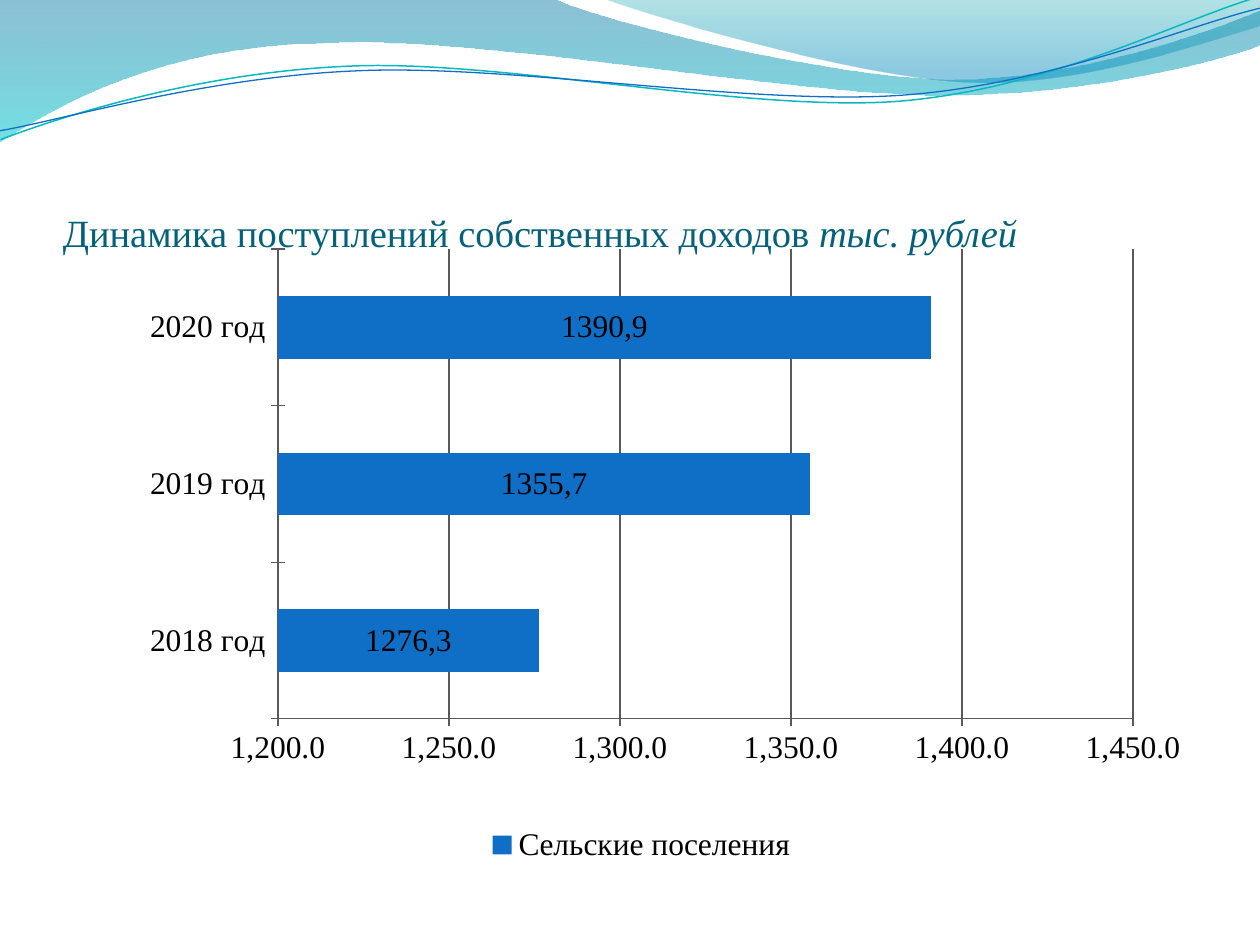
from lxml.etree import SubElement
from pptx import Presentation
from pptx.chart.data import CategoryChartData
from pptx.dml.color import RGBColor
from pptx.enum.chart import XL_CHART_TYPE, XL_LEGEND_POSITION, XL_TICK_MARK
from pptx.enum.text import MSO_ANCHOR
from pptx.oxml.ns import qn
from pptx.util import Pt

PX = 914400 / 126
FONT = "Times New Roman"
COLORS = {"title": "04617B", "bar": "0F6FC6", "teal": "0AB8BF", "text": "000000", "axis": "595959",
          "wave_top": "0074A1", "wave_end": "00C6CF", "crest_top": "00A1A9", "crest_end": "008BBF"}


def px(n):
    """Turn pixels into EMU."""
    return round(n * PX)


def rgb(name):
    """Look up a palette colour."""
    return RGBColor.from_string(COLORS[name])


def add_outline(s, box, start, segments, close):
    """Draw an outline of lines (2 numbers) and cubic curves (6 numbers) relative to the box."""
    flat = [start] + [seg[i:i + 2] for seg in segments for i in range(0, len(seg), 2)]
    points = [(px(box[0] + x), px(box[1] + y)) for x, y in flat]
    builder = s.shapes.build_freeform(*points[0])
    builder.add_line_segments(points[1:], close=close)
    sp = builder.convert_to_shape()
    steps = iter(list(sp._element.iter(qn("a:lnTo"))))
    for seg in segments:
        first = next(steps)
        if len(seg) == 6:
            curve = first.makeelement(qn("a:cubicBezTo"))
            first.addprevious(curve)
            for step in (first, next(steps), next(steps)):
                curve.append(step[0])
                step.getparent().remove(step)
    sp.shadow.inherit = False
    sp.fill.background()
    return sp


def fill_gradient(sp, stops):
    """Fill a shape from top to bottom with (position, colour, opacity) stops in percent."""
    sp.line.fill.background()
    sp.fill.gradient()
    grad = sp._element.spPr.find(qn("a:gradFill"))
    for child in list(grad):
        grad.remove(child)
    gs_lst = SubElement(grad, qn("a:gsLst"))
    for pos, color, alpha in stops:
        gs = SubElement(gs_lst, qn("a:gs"), pos=str(pos * 1000))
        clr = SubElement(gs, qn("a:srgbClr"), val=COLORS[color])
        SubElement(clr, qn("a:alpha"), val=str(alpha * 1000))
    SubElement(grad, qn("a:lin"), ang="5400000", scaled="0")


def add_header(s, box):
    """Draw the two waves and the two tilted thin lines at the top of the box."""
    wave = add_outline(s, box, (0, 0), [
        (554, -1), (600, 21, 837, 79, 955, 79), (1075, 79, 1207, 33, 1260, 11), (1261, 45),
        (1239, 55, 1096, 96, 940, 95), (784, 95, 481, 35, 324, 43), (163, 45, 58, 105, -1, 142)], True)
    fill_gradient(wave, [(0, "wave_top", 45), (100, "wave_end", 55)])
    crest = add_outline(s, box, (604, -1), [
        (641, 14, 859, 78, 969, 82), (1079, 87, 1211, 40, 1260, 26), (1260, 0)], True)
    fill_gradient(crest, [(0, "crest_top", 30), (80, "crest_end", 45)])
    lines = [
        ("teal", 0.85, (-2, 110), [(59, 90, 199, 52, 350, 53), (499, 53, 745, 118, 896, 114),
                                   (1049, 109, 1184, 45, 1260, 27)]),
        ("bar", 0.75, (-2, 101), [(57, 94, 207, 57, 357, 58), (509, 58, 750, 112, 902, 108),
                                  (1052, 104, 1188, 52, 1262, 38)])]
    for color, width, start, segments in lines:
        sp = add_outline(s, box, start, segments, False)
        sp.rotation = 357.3
        sp.line.color.rgb = rgb(color)
        sp.line.width = Pt(width)


def add_title(s, box):
    """Write the title at the bottom of the box."""
    tf = s.shapes.add_textbox(*map(px, box)).text_frame
    tf.word_wrap = True
    tf.vertical_anchor = MSO_ANCHOR.BOTTOM
    tf.margin_left = tf.margin_right = tf.margin_bottom = 0
    p = tf.paragraphs[0]
    p.font.size, p.font.name, p.font.color.rgb = Pt(22), FONT, rgb("title")
    p.add_run().text = "Динамика поступлений собственных доходов "
    r = p.add_run()
    r.text = "тыс. рублей"
    r.font.italic = True


def set_font(font, name=FONT):
    """Apply the chart's text style."""
    font.size, font.name, font.color.rgb = Pt(18), name, rgb("text")


def set_layout(element, index, box, part, inner=False):
    """Place a chart part, given in px, within the chart's box."""
    layout = element.find(qn("c:layout"))
    if layout is None:
        layout = element.makeelement(qn("c:layout"))
        element.insert(index, layout)
    manual = SubElement(layout, qn("c:manualLayout"))
    if inner:
        SubElement(manual, qn("c:layoutTarget"), val="inner")
    for tag in ("xMode", "yMode"):
        SubElement(manual, qn(f"c:{tag}"), val="edge")
    for tag, n, full in zip("xywh", part, box[2:] * 2):
        SubElement(manual, qn(f"c:{tag}"), val=str(n / full))


def add_income_chart(s, box):
    """Draw the income bars in the box."""
    values = [1276.3, 1355.7, 1390.9]
    data = CategoryChartData(number_format="#,##0.0")
    data.categories = ["2018 год", "2019 год", "2020 год"]
    data.add_series("Сельские поселения", values)
    chart = s.shapes.add_chart(XL_CHART_TYPE.BAR_STACKED, *map(px, box), data).chart
    chart.has_title = False
    set_font(chart.font, "Cambria")

    plot = chart.plots[0]
    plot.gap_width, plot.overlap, plot.vary_by_categories = 150, 100, False
    series = plot.series[0]
    series.format.fill.solid()
    series.format.fill.fore_color.rgb = rgb("bar")
    labels = series.data_labels
    labels.show_value = True
    labels.number_format, labels.number_format_is_linked = "#,##0.0", False
    set_font(labels.font)
    for i, value in enumerate(values):
        p = series.points[i].data_label.text_frame.paragraphs[0]
        r = p.add_run()
        r.text = str(value).replace(".", ",")
        set_font(r.font)

    for axis in (chart.category_axis, chart.value_axis):
        axis.major_tick_mark = XL_TICK_MARK.CROSS
        axis.minor_tick_mark = XL_TICK_MARK.NONE
        axis.format.line.color.rgb = rgb("axis")
        set_font(axis.tick_labels.font)
    axis = chart.value_axis
    axis.minimum_scale, axis.maximum_scale, axis.major_unit = 1200, 1450, 50
    axis.tick_labels.number_format = "#,##0.0"
    axis.tick_labels.number_format_is_linked = False
    axis.major_gridlines.format.line.color.rgb = rgb("axis")

    chart.has_legend = True
    chart.legend.position = XL_LEGEND_POSITION.RIGHT
    chart.legend.include_in_layout = False
    set_font(chart.legend.font)
    set_layout(chart.legend._element, 1, box, (419, 604, 319, 40))
    set_layout(chart._chartSpace.chart.plotArea, 0, box, (215, 28, 855, 470), inner=True)


def main():
    """Build the slide."""
    prs = Presentation()
    prs.slide_width, prs.slide_height = px(1260), px(945)
    s = prs.slides.add_slide(prs.slide_layouts[6])
    add_header(s, (0, 0, 1260, 142))
    add_title(s, (63, 97, 1134, 158))
    add_income_chart(s, (63, 221, 1138, 665))
    prs.save("out.pptx")


if __name__ == "__main__":
    main()
